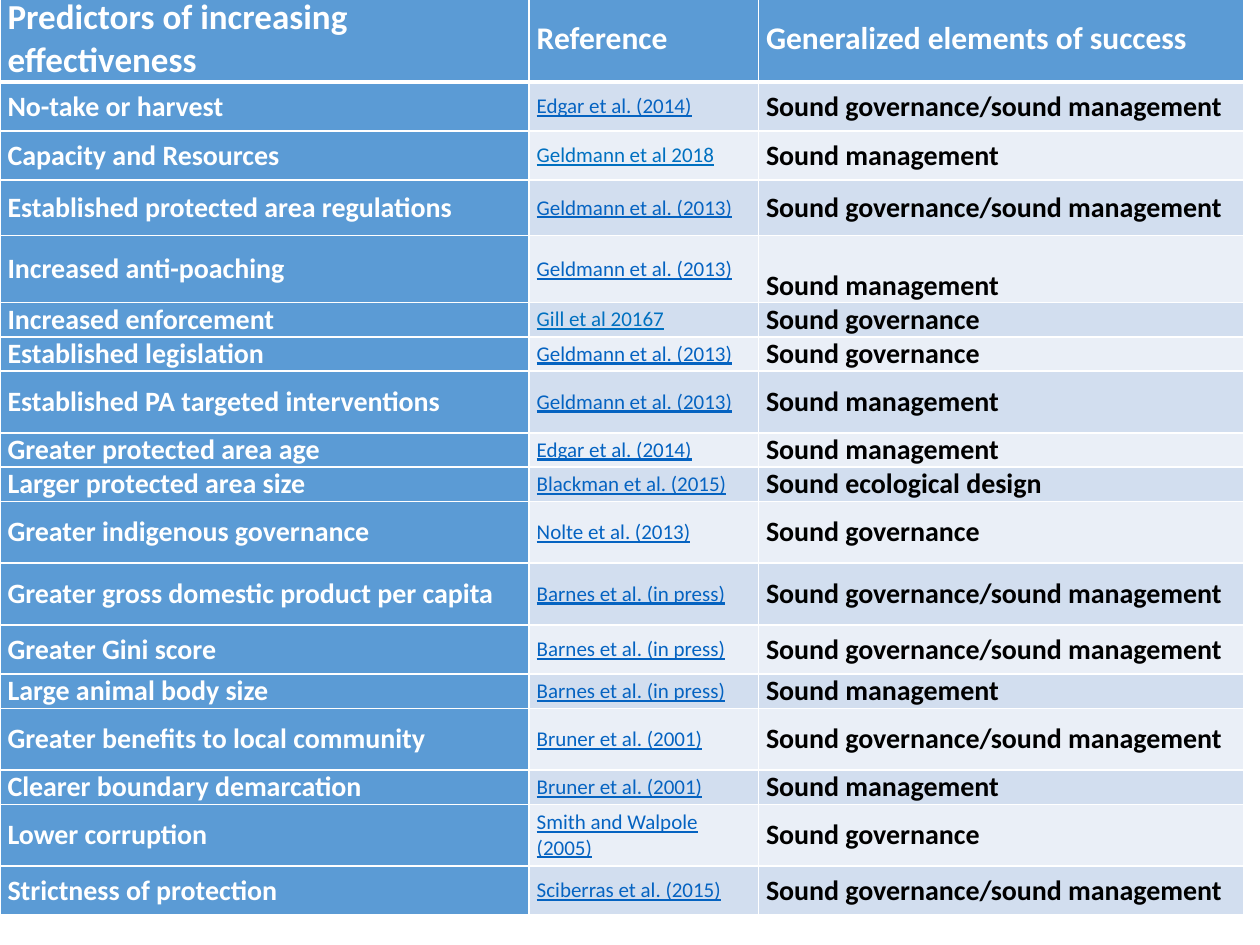
from lxml.etree import SubElement
from pptx import Presentation
from pptx.dml.color import RGBColor
from pptx.enum.text import MSO_ANCHOR as Anchor
from pptx.oxml.ns import qn
from pptx.util import Inches, Pt

WHITE = RGBColor(0xFF, 0xFF, 0xFF)
BLACK = RGBColor(0x00, 0x00, 0x00)
BLUE = RGBColor(0x5B, 0x9B, 0xD5)
BAND_DARK = RGBColor(0xD2, 0xDE, 0xEF)
BAND_LIGHT = RGBColor(0xEA, 0xEF, 0xF7)
LINK_BLUE = RGBColor(0x05, 0x63, 0xC1)
BRIGHT_BLUE = RGBColor(0x00, 0x70, 0xC0)

GOVERNANCE = "Sound governance"
MANAGEMENT = "Sound management"
BOTH = "Sound governance/sound management"
DESIGN = "Sound ecological design"

HEADINGS = ["Predictors of increasing effectiveness", "Reference",
            "Generalized elements of success"]
HEADING_SIZES = [20, 18, 18]
COLUMN_WIDTHS = [4.2, 1.82, 3.85]
HEADER_HEIGHT = 0.64

# Row height, predictor, reference, element of success
PREDICTORS = [
    (0.39, "No-take or harvest", "Edgar et al. (2014)", BOTH),
    (0.39, "Capacity and Resources", "Geldmann et al 2018", MANAGEMENT),
    (0.44, "Established protected area regulations", "Geldmann et al. (2013)", BOTH),
    (0.53, "Increased anti-poaching", "Geldmann et al. (2013)", MANAGEMENT),
    (0.25, "Increased enforcement", "Gill et al 20167", GOVERNANCE),
    (0.25, "Established legislation", "Geldmann et al. (2013)", GOVERNANCE),
    (0.49, "Established PA targeted interventions", "Geldmann et al. (2013)", MANAGEMENT),
    (0.25, "Greater protected area age", "Edgar et al. (2014)", MANAGEMENT),
    (0.25, "Larger protected area size", "Blackman et al. (2015)", DESIGN),
    (0.49, "Greater indigenous governance", "Nolte et al. (2013)", GOVERNANCE),
    (0.49, "Greater gross domestic product per capita", "Barnes et al. (in press)", BOTH),
    (0.39, "Greater Gini score", "Barnes et al. (in press)", BOTH),
    (0.25, "Large animal body size", "Barnes et al. (in press)", MANAGEMENT),
    (0.49, "Greater benefits to local community", "Bruner et al. (2001)", BOTH),
    (0.25, "Clearer boundary demarcation", "Bruner et al. (2001)", MANAGEMENT),
    (0.49, "Lower corruption", "Smith and Walpole (2005)", GOVERNANCE),
    (0.39, "Strictness of protection", "Sciberras et al. (2015)", BOTH),
]
LOWERED_ROW = 4  # its element of success sits one line lower


class SlideBuilder:
    font = "Calibri"
    side_margin = Inches(0.06)

    def __init__(self, slide):
        self.slide = slide

    def table(self, left, top, widths, heights):
        table = self.slide.shapes.add_table(
            len(heights), len(widths), Inches(left), Inches(top),
            Inches(sum(widths)), Inches(sum(heights))).table
        table.first_row = table.horz_banding = False
        for column, width in zip(table.columns, widths):
            column.width = Inches(width)
        for row, height in zip(table.rows, heights):
            row.height = Inches(height)
        return table

    def borders(self, cell, top=1, bottom=1):
        properties = cell._tc.get_or_add_tcPr()
        for side, width in zip("LRTB", (1, 1, top, bottom)):
            line = SubElement(properties, qn(f"a:ln{side}"), w=str(Pt(width)))
            SubElement(SubElement(line, qn("a:solidFill")),
                       qn("a:srgbClr"), val=str(WHITE))

    def cell(self, cell, text, fill, color, size=16, link=False, **borders):
        self.borders(cell, **borders)
        cell.fill.solid()
        cell.fill.fore_color.rgb = fill
        cell.vertical_anchor = Anchor.MIDDLE
        cell.margin_left = cell.margin_right = self.side_margin
        cell.margin_top = cell.margin_bottom = 0
        cell.text_frame.text = text
        font = cell.text_frame.paragraphs[0].runs[0].font
        font.name, font.size = self.font, Pt(size)
        font.bold, font.underline = not link, link
        font.color.rgb = color


def main():
    deck = Presentation()
    deck.slide_width, deck.slide_height = Inches(10), Inches(7.5)
    builder = SlideBuilder(deck.slides.add_slide(deck.slide_layouts[6]))

    heights = [HEADER_HEIGHT] + [entry[0] for entry in PREDICTORS]
    table = builder.table(0, -0.03, COLUMN_WIDTHS, heights)

    # Header row
    for column, (heading, size) in enumerate(zip(HEADINGS, HEADING_SIZES)):
        builder.cell(table.cell(0, column), heading, BLUE, WHITE, size, bottom=3)

    # Predictor rows in alternating bands
    for row, (_, predictor, reference, element) in enumerate(PREDICTORS, start=1):
        band = BAND_DARK if row % 2 else BAND_LIGHT
        link_color = LINK_BLUE if reference.endswith(")") else BRIGHT_BLUE
        top = 3 if row == 1 else 1
        builder.cell(table.cell(row, 0), predictor, BLUE, WHITE, top=top)
        builder.cell(table.cell(row, 1), reference, band, link_color, 12,
                     link=True, top=top)
        builder.cell(table.cell(row, 2), element, band, BLACK, top=top)
    table.cell(LOWERED_ROW, 2).margin_top = Inches(0.26)

    deck.save("out.pptx")


if __name__ == "__main__":
    main()
